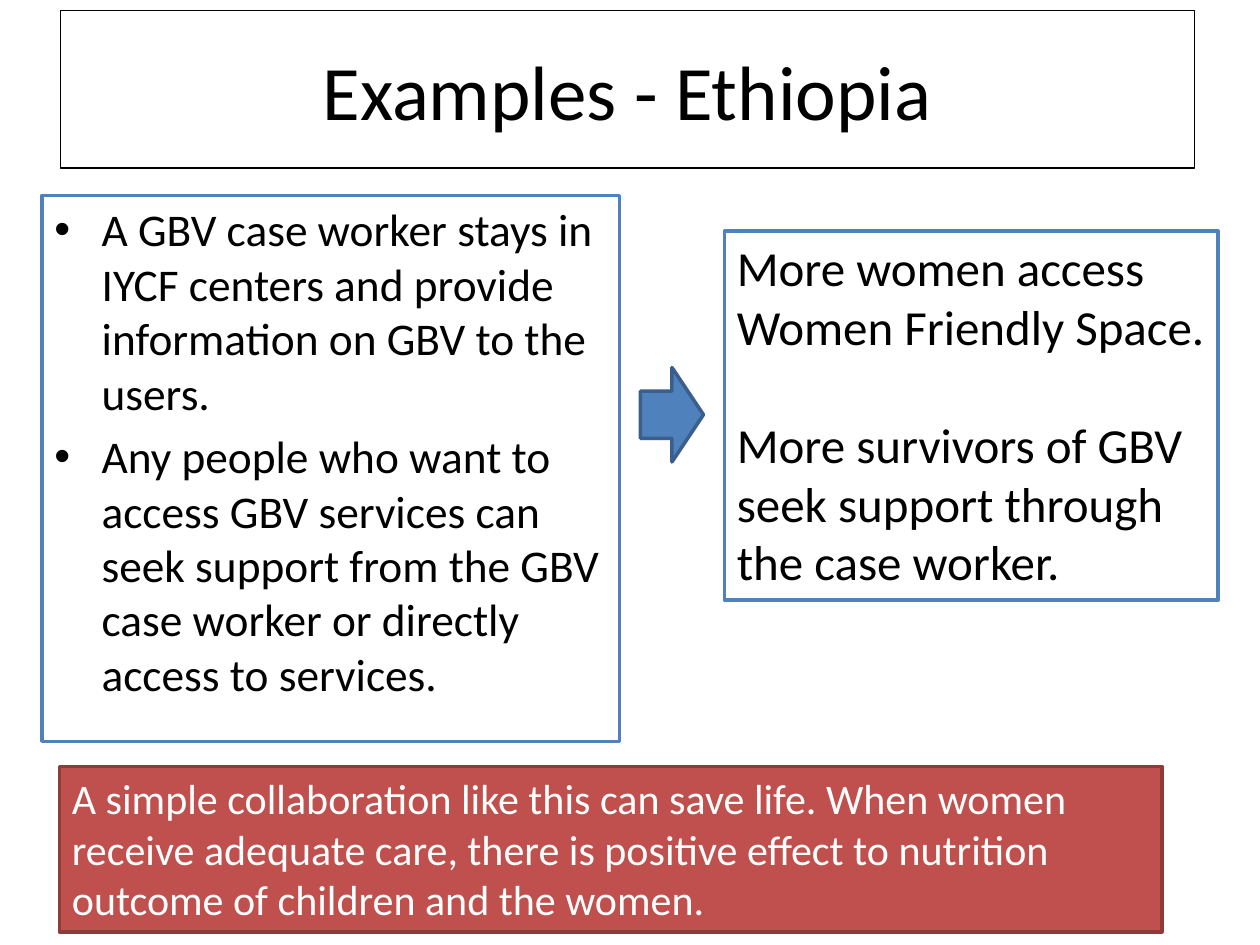
from pptx import Presentation
from pptx.dml.color import RGBColor
from pptx.enum.shapes import MSO_SHAPE
from pptx.enum.text import MSO_ANCHOR, PP_ALIGN
from pptx.util import Pt
from lxml import etree

RECT, ARROW = MSO_SHAPE.RECTANGLE, MSO_SHAPE.RIGHT_ARROW
TOP, MIDDLE = MSO_ANCHOR.TOP, MSO_ANCHOR.MIDDLE
LEFT, CENTER = PP_ALIGN.LEFT, PP_ALIGN.CENTER
FONT = "Calibri"
BLACK, WHITE = "000000", "FFFFFF"
BLUE, NAVY = "4F81BD", "3A5F8C"
RED, MAROON = "C0504D", "8E3B39"
SPACE = "{http://schemas.openxmlformats.org/drawingml/2006/main}"


def color(code):
    return RGBColor.from_string(code)


def add_box(slide, box, kind, fill, line, width=2):
    shape = slide.shapes.add_shape(kind, *map(Pt, box))
    shape.shadow.inherit = False
    if fill:
        shape.fill.solid()
        shape.fill.fore_color.rgb = color(fill)
    else:
        shape.fill.background()
    shape.line.color.rgb = color(line)
    shape.line.width = Pt(width)
    return shape


def add_text(shape, lines, size, ink=BLACK, gap=0, align=LEFT, anchor=TOP):
    frame = shape.text_frame
    frame.word_wrap = True
    frame.vertical_anchor = anchor
    frame.text = "\n".join(lines)
    for i, para in enumerate(frame.paragraphs):
        para.alignment = align
        para.space_before = Pt(gap if i else 0)
        para.font.name = FONT
        para.font.size = Pt(size)
        para.font.color.rgb = color(ink)


def add_bullets(shape, indent):
    for para in shape.text_frame.paragraphs:
        props = para._p.get_or_add_pPr()
        props.set("marL", str(Pt(indent)))
        props.set("indent", str(-Pt(indent)))
        face = etree.Element(SPACE + "buFont", typeface="Arial")
        mark = etree.Element(SPACE + "buChar", char="•")
        style = props.find(SPACE + "defRPr")
        style.addprevious(face)
        style.addprevious(mark)


def add_title(slide, box):
    shape = add_box(slide, box, RECT, None, BLACK, 0.75)
    add_text(shape, ["Examples - Ethiopia"], 44, align=CENTER, anchor=MIDDLE)


def add_action(slide, box):
    shape = add_box(slide, box, RECT, WHITE, BLUE)
    add_text(shape, [
        "A GBV case worker stays in IYCF centers and provide information "
        "on GBV to the users.",
        "Any people who want to access GBV services can seek support from "
        "the GBV case worker or directly access to services.",
    ], 25.9, gap=5.2)
    add_bullets(shape, 27)


def add_result(slide, box):
    shape = add_box(slide, box, RECT, WHITE, BLUE)
    add_text(shape, [
        "More women access Women Friendly Space.",
        "More survivors of GBV seek support through the case worker.",
    ], 28, gap=34)


def add_lesson(slide, box):
    shape = add_box(slide, box, RECT, RED, MAROON)
    add_text(shape, [
        "A simple collaboration like this can save life. When women receive "
        "adequate care, there is positive effect to nutrition outcome of "
        "children and the women.",
    ], 24, WHITE)


def main():
    deck = Presentation()
    deck.slide_width, deck.slide_height = Pt(720), Pt(540)
    slide = deck.slides.add_slide(deck.slide_layouts[6])
    add_title(slide, (34.5, 6, 648, 90))
    add_action(slide, (24, 111.6, 330, 312))
    add_result(slide, (414, 132, 282, 211))
    add_box(slide, (366, 210, 36, 54), ARROW, BLUE, NAVY)
    add_lesson(slide, (34, 438, 630, 94.5))
    deck.save("out.pptx")


if __name__ == "__main__":
    main()
